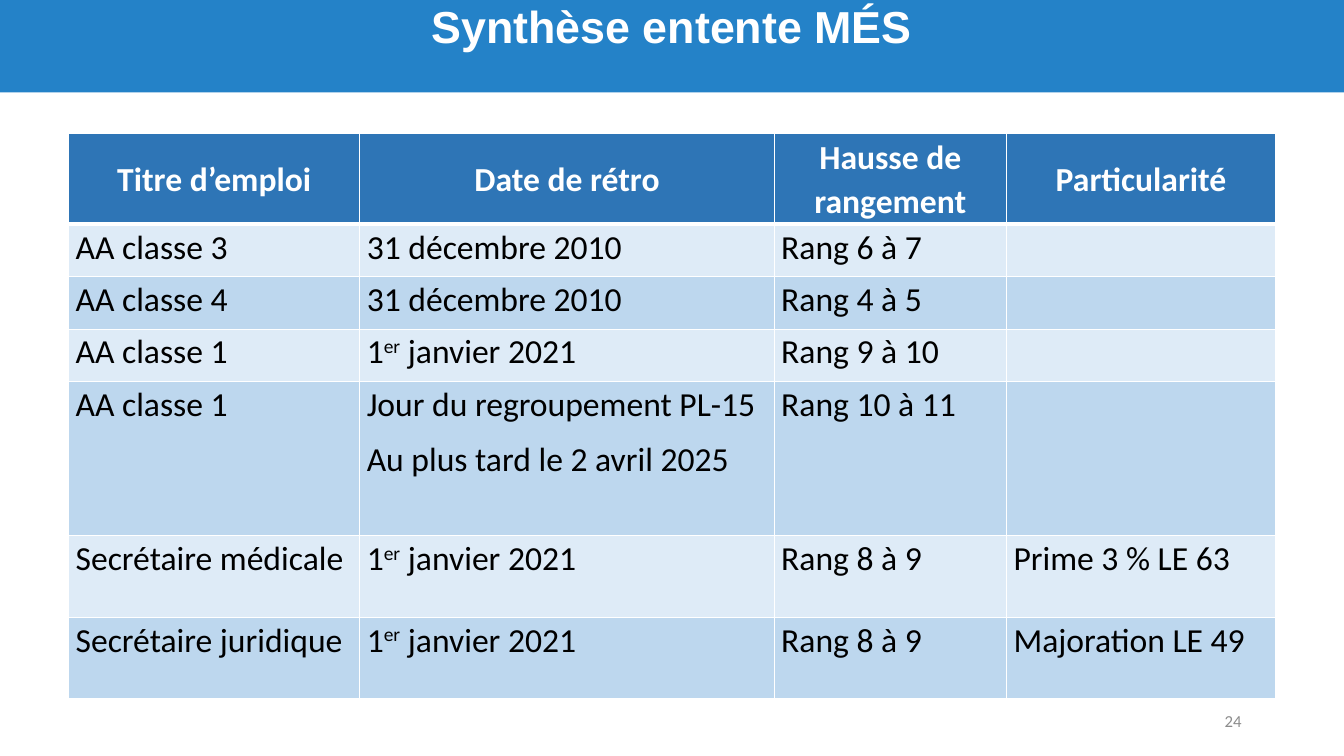
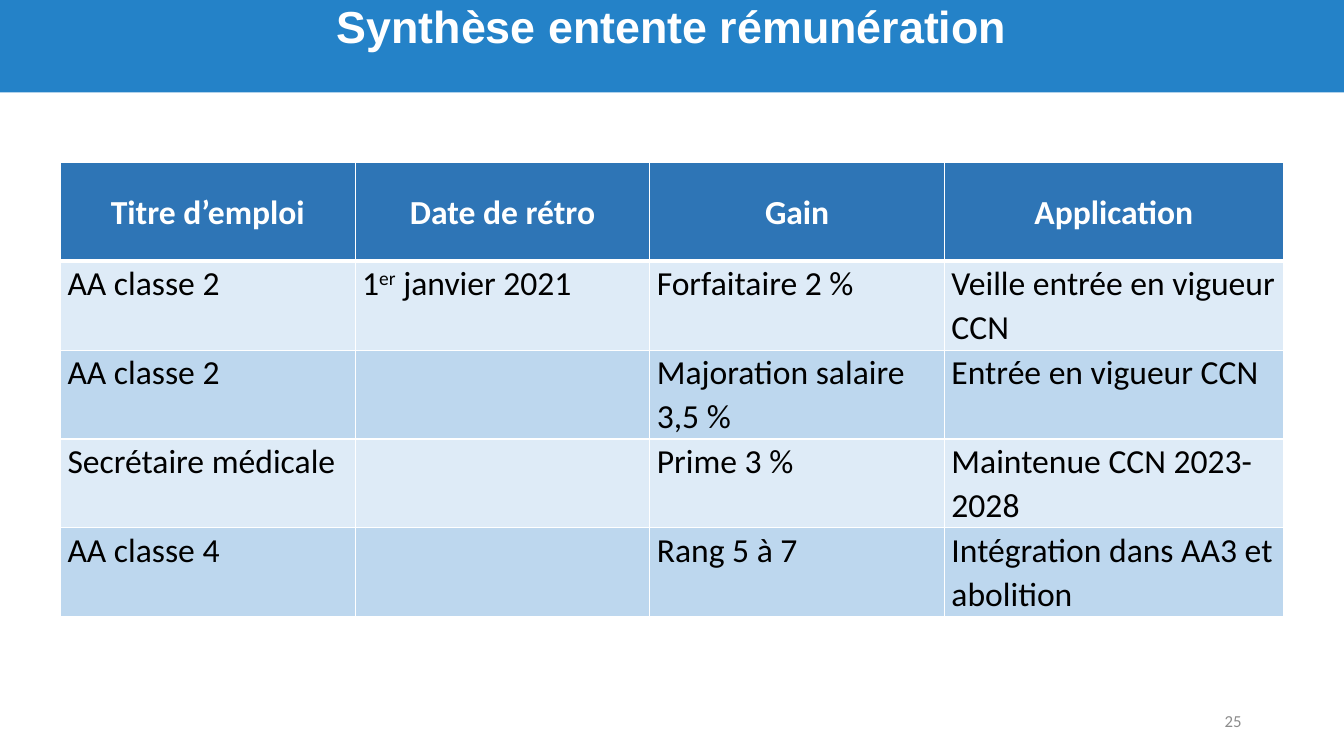
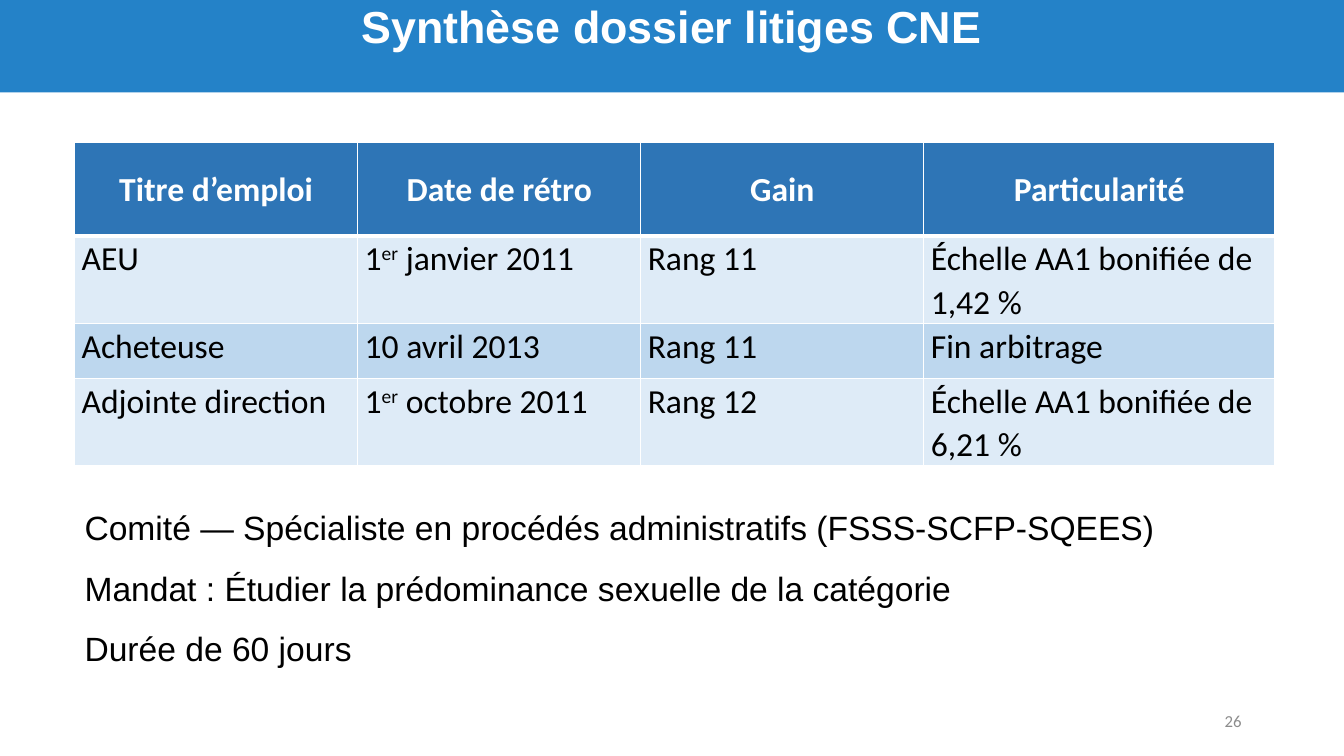
from lxml import etree
from pptx import Presentation
from pptx.dml.color import RGBColor
from pptx.enum.text import MSO_ANCHOR, MSO_AUTO_SIZE, PP_ALIGN
from pptx.oxml.ns import qn
from pptx.util import Pt

CENTER, LEFT, RIGHT = PP_ALIGN.CENTER, PP_ALIGN.LEFT, PP_ALIGN.RIGHT
TOP, MIDDLE = MSO_ANCHOR.TOP, MSO_ANCHOR.MIDDLE
NO_AUTOFIT = MSO_AUTO_SIZE.NONE

SLIDE_WIDTH, SLIDE_HEIGHT = 960, 540
TITLE_BOX = (0, 0, SLIDE_WIDTH, 66)
NUMBER_BOX = (678, 500.5, 216, 28.8)
FIRST_NUMBER = 24
TITLE_ONLY = 5

WHITE, BLACK, GREY = "FFFFFF", "000000", "8C8C8C"
BAND_BLUE, HEADER_BLUE = "2482C8", "2E75B6"
ROW_BLUES = ("DEEBF7", "BDD7EE")

TITLE_FORMAT = {"font": "Arial", "size": 32, "color": WHITE, "bold": True}
NUMBER_FORMAT = {"font": "Calibri", "size": 12, "color": GREY, "bold": False}
HEADER_FORMAT = {"font": "Calibri", "size": 24, "color": WHITE, "bold": True}
CELL_FORMAT = {**HEADER_FORMAT, "color": BLACK, "bold": False}
NOTE_FORMAT = {**CELL_FORMAT, "font": "Arial"}
CELL_MARGINS = {"margin_left": Pt(5.04), "margin_right": Pt(5.04),
                "margin_top": 0, "margin_bottom": 0}
CELL_SPACING = {"line_spacing": 1.07, "space_after": Pt(8)}

SLIDES = [
    {
        "title": "Synthèse entente MÉS",
        "corner": (49, 95.4),
        "columns": [208, 296, 166, 192.2],
        "heights": [64.8, 37.5, 37.5, 37.5, 110, 58.3, 58.3],
        "rows": [
            ["Titre d’emploi", "Date de rétro", "Hausse de rangement", "Particularité"],
            ["AA classe 3", "31 décembre 2010", "Rang 6 à 7", ""],
            ["AA classe 4", "31 décembre 2010", "Rang 4 à 5", ""],
            ["AA classe 1", "1^er^ janvier 2021", "Rang 9 à 10", ""],
            ["AA classe 1", "Jour du regroupement PL-15\nAu plus tard le 2 avril 2025",
             "Rang 10 à 11", ""],
            ["Secrétaire médicale", "1^er^ janvier 2021", "Rang 8 à 9", "Prime 3 % LE 63"],
            ["Secrétaire juridique", "1^er^ janvier 2021", "Rang 8 à 9", "Majoration LE 49"],
        ],
    },
    {
        "title": "Synthèse entente rémunération",
        "corner": (43.2, 116),
        "columns": [210.5] * 3 + [242],
        "heights": [70.6] + [63.5] * 4,
        "rows": [
            ["Titre d’emploi", "Date de rétro", "Gain", "Application"],
            ["AA classe 2", "1^er^ janvier 2021", "Forfaitaire 2 %", "Veille entrée en vigueur CCN"],
            ["AA classe 2", "", "Majoration salaire 3,5 %", "Entrée en vigueur CCN"],
            ["Secrétaire médicale", "", "Prime 3 %", "Maintenue CCN 2023-2028"],
            ["AA classe 4", "", "Rang 5 à 7", "Intégration dans AA3 et abolition"],
        ],
    },
    {
        "title": "Synthèse dossier litiges CNE",
        "corner": (53.3, 101.6),
        "columns": [202.2] * 3 + [250.6],
        "heights": [67, 62.5, 39.2, 62.5],
        "rows": [
            ["Titre d’emploi", "Date de rétro", "Gain", "Particularité"],
            ["AEU", "1^er^ janvier 2011", "Rang 11", "Échelle AA1 bonifiée de 1,42 %"],
            ["Acheteuse", "10 avril 2013", "Rang 11", "Fin arbitrage"],
            ["Adjointe direction", "1^er^ octobre 2011", "Rang 12", "Échelle AA1 bonifiée de 6,21 %"],
        ],
        "note_box": (53.3, 358.6, 857.5, 124),
        "note": "Comité — Spécialiste en procédés administratifs (FSSS-SCFP-SQEES)\n"
                "Mandat : Étudier la prédominance sexuelle de la catégorie\n"
                "Durée de 60 jours",
    },
]


def rgb(color):
    return RGBColor.from_string(color)


def set_attributes(target, values):
    for name, value in values.items():
        setattr(target, name, value)


def set_fill(target, color):
    target.fill.solid()
    target.fill.fore_color.rgb = rgb(color)


def write_text(frame, text, text_format, paragraph_format):
    for index, line in enumerate(text.split("\n")):
        paragraph = frame.add_paragraph() if index else frame.paragraphs[0]
        set_attributes(paragraph, paragraph_format)
        for position, part in enumerate(line.split("^")):
            run = paragraph.add_run()
            run.text = part
            set_attributes(run.font, {"name": text_format["font"],
                                      "size": Pt(text_format["size"]),
                                      "bold": text_format["bold"]})
            run.font.color.rgb = rgb(text_format["color"])
            if position % 2:
                run._r.get_or_add_rPr().set("baseline", "30000")


def add_title(slide, text):
    title = slide.shapes.title
    edges = ("left", "top", "width", "height")
    set_attributes(title, dict(zip(edges, map(Pt, TITLE_BOX))))
    set_fill(title, BAND_BLUE)
    set_attributes(title.text_frame, {"vertical_anchor": TOP, "auto_size": NO_AUTOFIT,
                                      "word_wrap": True})
    write_text(title.text_frame, text, TITLE_FORMAT,
               {"alignment": CENTER, "line_spacing": 0.9})


def add_text(slide, box, text, text_format, anchor, paragraph_format):
    frame = slide.shapes.add_textbox(*map(Pt, box)).text_frame
    set_attributes(frame, {"word_wrap": True, "vertical_anchor": anchor})
    write_text(frame, text, text_format, paragraph_format)


def set_borders(cell, widths):
    properties = cell._tc.get_or_add_tcPr()
    for side, width in widths.items():
        line = etree.SubElement(properties, qn(f"a:ln{side}"), w=str(Pt(width)))
        fill = etree.SubElement(line, qn("a:solidFill"))
        etree.SubElement(fill, qn("a:srgbClr"), val=WHITE)


def format_cell(cell, text, row_index):
    is_header = row_index == 0
    set_attributes(cell, {**CELL_MARGINS, "vertical_anchor": MIDDLE if is_header else TOP})
    set_borders(cell, {"L": 1, "R": 1, "T": 3 if row_index == 1 else 1,
                       "B": 3 if is_header else 1})
    set_fill(cell, HEADER_BLUE if is_header else ROW_BLUES[(row_index - 1) % 2])
    if text:
        write_text(cell.text_frame, text, HEADER_FORMAT if is_header else CELL_FORMAT,
                   {**CELL_SPACING, "alignment": CENTER if is_header else LEFT})


def add_summary_table(slide, corner, columns, heights, rows):
    box = (*corner, sum(columns), sum(heights))
    table = slide.shapes.add_table(len(rows), len(columns), *map(Pt, box)).table
    for column, width in zip(table.columns, columns):
        column.width = Pt(width)
    for row_index, (row, height, texts) in enumerate(zip(table.rows, heights, rows)):
        row.height = Pt(height)
        for cell, text in zip(row.cells, texts):
            format_cell(cell, text, row_index)


def main():
    presentation = Presentation()
    set_attributes(presentation, {"slide_width": Pt(SLIDE_WIDTH),
                                  "slide_height": Pt(SLIDE_HEIGHT)})
    for number, content in enumerate(SLIDES, FIRST_NUMBER):
        slide = presentation.slides.add_slide(presentation.slide_layouts[TITLE_ONLY])
        add_title(slide, content["title"])
        add_text(slide, NUMBER_BOX, str(number), NUMBER_FORMAT, MIDDLE, {"alignment": RIGHT})
        add_summary_table(slide, content["corner"], content["columns"],
                          content["heights"], content["rows"])
        if "note" in content:
            add_text(slide, content["note_box"], content["note"], NOTE_FORMAT, TOP,
                     {"space_after": Pt(14.5)})
    presentation.save("out.pptx")


if __name__ == "__main__":
    main()
